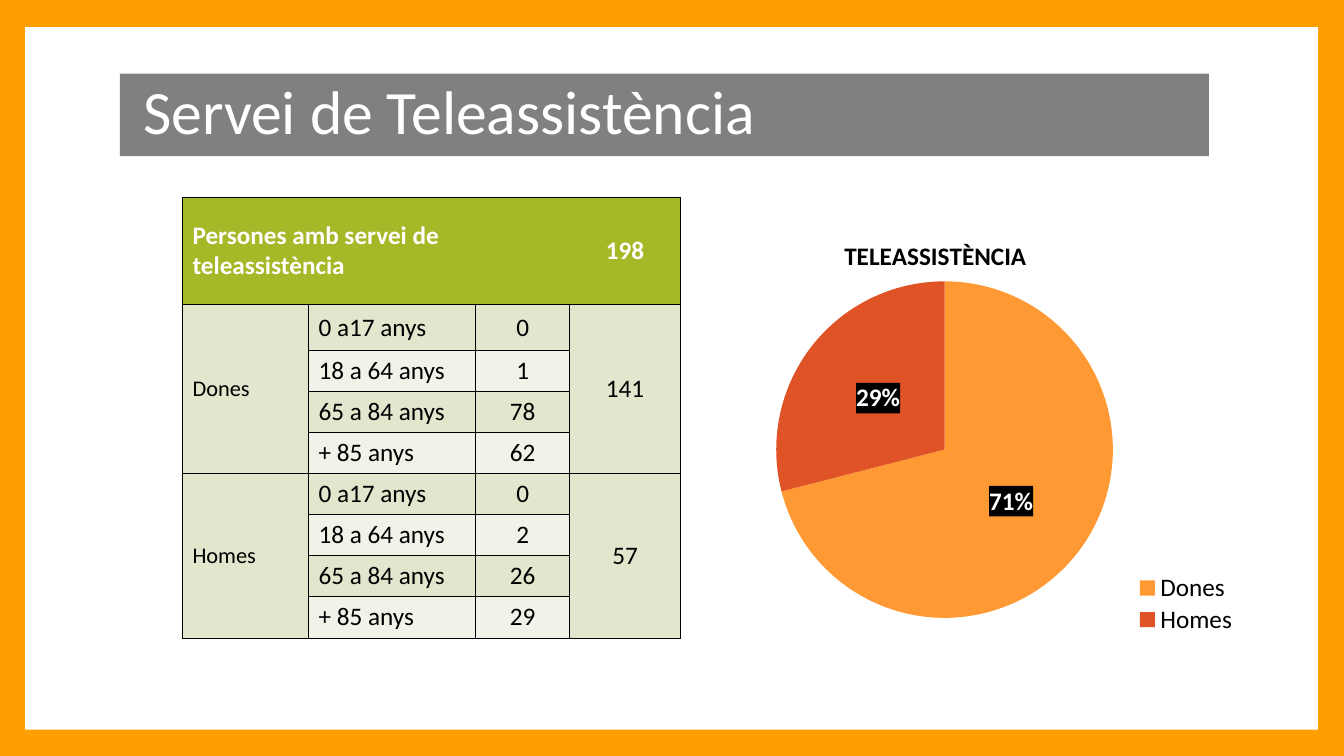
from lxml import etree
from pptx import Presentation
from pptx.chart.data import CategoryChartData
from pptx.dml.color import RGBColor
from pptx.enum.chart import XL_CHART_TYPE, XL_LABEL_POSITION, XL_LEGEND_POSITION
from pptx.enum.shapes import MSO_SHAPE
from pptx.enum.text import MSO_ANCHOR, MSO_AUTO_SIZE, PP_ALIGN
from pptx.oxml import parse_xml
from pptx.oxml.ns import nsdecls, qn
from pptx.util import Inches, Pt

PIE = XL_CHART_TYPE.PIE
MID = MSO_ANCHOR.MIDDLE
LEFT, CENTER = PP_ALIGN.LEFT, PP_ALIGN.CENTER
WIDE, HIGH = 13.33, 7.5
COLS = [1.25, 1.66, 0.93, 1.1]
ROWS = [1.06, 0.46] + [0.4] * 6 + [0.42]
AGES = ["0 a17 anys", "18 a 64 anys", "65 a 84 anys", "+ 85 anys"]
GROUPS = [("Dones", [0, 1, 78, 62], 141), ("Homes", [0, 2, 26, 29], 57)]
BANDS = ["E1E6CD", "F1F3E8"]
SHARES = [("Dones", 71, "FF9933"), ("Homes", 29, "DF5327")]


def paint(fill, color):
    fill.solid()
    fill.fore_color.rgb = RGBColor.from_string(color)


def style(font, size=18, color="000000", bold=False):
    for key, val in {"name": "Calibri", "size": Pt(size), "bold": bold}.items():
        setattr(font, key, val)
    paint(font.fill, color)


def place(shape, box):
    for key, val in zip(("left", "top", "width", "height"), box):
        setattr(shape, key, Inches(val))


def add_panel(slide, box):
    paint(slide.background.fill, "FE9E00")
    panel = slide.shapes.add_shape(MSO_SHAPE.RECTANGLE, *map(Inches, box))
    panel.shadow.inherit = False
    paint(panel.fill, "FFFFFF")
    panel.line.fill.background()
    slide.shapes.title.element.addprevious(panel.element)


def add_title(slide, box):
    title = slide.shapes.title
    place(title, box)
    paint(title.fill, "808080")
    frame = title.text_frame
    frame.text = "Servei de Teleassistència"
    for key, val in {"auto_size": MSO_AUTO_SIZE.NONE, "word_wrap": True,
                     "vertical_anchor": MID, "margin_left": Inches(0.23)}.items():
        setattr(frame, key, val)
    para = frame.paragraphs[0]
    para.alignment, para.line_spacing = LEFT, 0.9
    style(para.runs[0].font, 44, "FFFFFF")


def edge(cell, hidden):
    props = cell._tc.get_or_add_tcPr()
    for side in "LRTB":
        line = etree.SubElement(props, qn(f"a:ln{side}"), w=str(Pt(0.75)))
        if side in hidden:
            etree.SubElement(line, qn("a:noFill"))
        else:
            fill = etree.SubElement(line, qn("a:solidFill"))
            etree.SubElement(fill, qn("a:srgbClr"), val="000000")


def write(cell, text, align=LEFT, **look):
    cell.text = str(text)
    para = cell.text_frame.paragraphs[0]
    para.alignment = align
    style(para.runs[0].font, **look)


def add_grid(slide, box):
    grid = slide.shapes.add_table(len(ROWS), len(COLS), *map(Inches, box)).table
    for col, width in zip(grid.columns, COLS):
        col.width = Inches(width)
    for row, height in zip(grid.rows, ROWS):
        row.height = Inches(height)
    for r in range(len(ROWS)):
        for c in range(len(COLS)):
            cell = grid.cell(r, c)
            cell.vertical_anchor = MID
            edge(cell, ["R", "LR", "LR", "L"][c] if r == 0 else "")
            band = BANDS[(r - 1) % 2] if c in (1, 2) else BANDS[0]
            paint(cell.fill, "A6B727" if r == 0 else band)
    grid.cell(0, 0).merge(grid.cell(0, 2))
    head = {"color": "FFFFFF", "bold": True}
    write(grid.cell(0, 0), "Persones amb servei de teleassistència", **head)
    write(grid.cell(0, 3), 198, CENTER, **head)
    for g, (name, counts, total) in enumerate(GROUPS):
        top = 1 + g * len(AGES)
        for c in (0, 3):
            grid.cell(top, c).merge(grid.cell(top + len(AGES) - 1, c))
        write(grid.cell(top, 0), name, size=16)
        write(grid.cell(top, 3), total, CENTER)
        for r, (age, count) in enumerate(zip(AGES, counts), top):
            write(grid.cell(r, 1), age)
            write(grid.cell(r, 2), count, CENTER)


def arrange(node, after, inner=False, **spots):
    for old in node.findall(qn("c:layout")):
        node.remove(old)
    layout = parse_xml(f"<c:layout {nsdecls('c')}><c:manualLayout/></c:layout>")
    vals = {"layoutTarget": "inner"} if inner else {}
    vals.update({f"{key}Mode": "edge" for key in "xy"}, **spots)
    for key, val in vals.items():
        etree.SubElement(layout[0], qn(f"c:{key}"), val=str(val))
    if after is None:
        node.insert(0, layout)
    else:
        after.addnext(layout)


def add_pie(slide, box):
    data = CategoryChartData()
    data.categories = [name for name, _, _ in SHARES]
    data.add_series("TELEASSISTÈNCIA", [val for _, val, _ in SHARES])
    chart = slide.shapes.add_chart(PIE, *map(Inches, box), data).chart
    style(chart.font)
    chart.has_title = True
    frame = chart.chart_title.text_frame
    frame.text = "TELEASSISTÈNCIA"
    style(frame.paragraphs[0].runs[0].font, bold=True)
    chart.chart_title.include_in_layout = False
    head = chart.chart_title._element
    arrange(head, head.find(qn("c:tx")), x=0.33, y=0.06)
    chart.has_legend = True
    legend = chart.legend
    legend.position, legend.include_in_layout = XL_LEGEND_POSITION.RIGHT, False
    style(legend.font)
    key = legend._element
    arrange(key, key.find(qn("c:legendPos")), x=0.79, y=0.85, w=0.17, h=0.15)
    plot = chart.plots[0]
    plot.vary_by_categories = True
    area = plot._element.getparent()
    arrange(area, None, True, x=0.23, y=0.17, w=0.53, h=0.79)
    series = plot.series[0]
    for i, (_, _, color) in enumerate(SHARES):
        paint(series.points[i].format.fill, color)
    labels = series.data_labels
    for key, val in {"show_percentage": True, "show_value": False,
                     "number_format": "0%", "number_format_is_linked": False,
                     "position": XL_LABEL_POSITION.CENTER}.items():
        setattr(labels, key, val)
    style(labels.font, color="FFFFFF", bold=True)
    back = parse_xml(f'<c:spPr {nsdecls("c", "a")}><a:solidFill>'
                     '<a:srgbClr val="000000"/></a:solidFill></c:spPr>')
    labels._element.find(qn("c:txPr")).addprevious(back)


def main():
    deck = Presentation()
    deck.slide_width, deck.slide_height = Inches(WIDE), Inches(HIGH)
    slide = deck.slides.add_slide(deck.slide_layouts[5])
    add_panel(slide, (0.25, 0.27, 12.82, 6.97))
    add_title(slide, (1.19, 0.73, 10.8, 0.82))
    add_grid(slide, (1.81, 1.96, sum(COLS), sum(ROWS)))
    add_pie(slide, (6.25, 2.06, 6.3, 4.25))
    deck.save("out.pptx")


if __name__ == "__main__":
    main()
